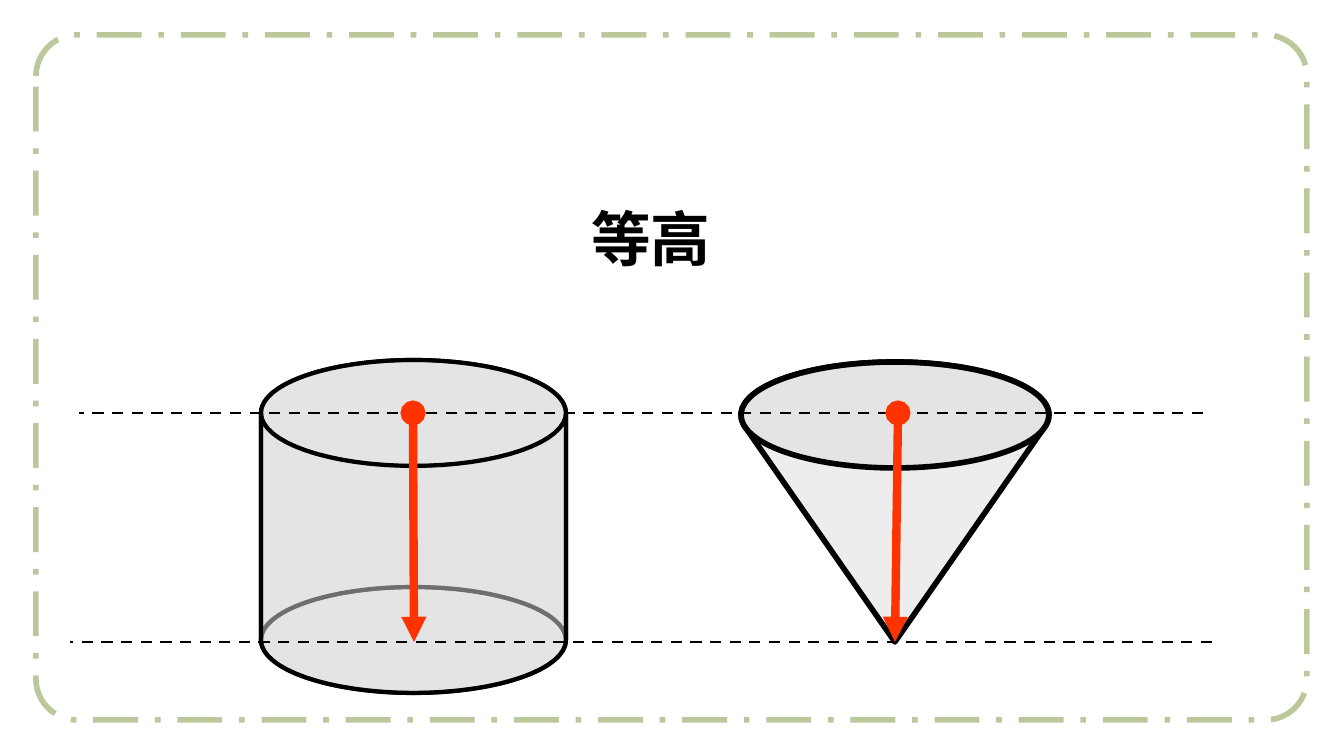
from dataclasses import dataclass
from math import cos, radians, sin

from lxml import etree
from pptx import Presentation
from pptx.dml.color import RGBColor
from pptx.enum.dml import MSO_LINE
from pptx.enum.shapes import MSO_CONNECTOR, MSO_SHAPE
from pptx.enum.text import MSO_ANCHOR, MSO_AUTO_SIZE, PP_ALIGN
from pptx.oxml.ns import qn
from pptx.util import Pt

EMU_PER_PX = 914400 / 134.4


@dataclass(frozen=True)
class Theme:
    white: str = "FFFFFF"
    ink: str = "000000"
    frame: str = "BAC89B"
    solid: str = "DDDDDD"
    height: str = "FF3300"
    font: str = "Noto Sans CJK SC"
    title_size: int = 32


THEME = Theme()


def px(n):
    return round(n * EMU_PER_PX)


def format_line(line, color, width, dash=None):
    line.color.rgb = RGBColor.from_string(color)
    line.width = Pt(width)
    if dash is not None:
        line.dash_style = dash


def format_shape(sp, fill, color, width, dash=None, alpha=None):
    sp.shadow.inherit = False
    sp.fill.solid()
    sp.fill.fore_color.rgb = RGBColor.from_string(fill)
    if alpha is not None:
        clr = sp._element.spPr.find(qn("a:solidFill"))[0]
        etree.SubElement(clr, qn("a:alpha")).set("val", str(alpha * 1000))
    format_line(sp.line, color, width, dash)


def arc(oval, start, end, steps=32):
    """Points on an ellipse (left, top, width, height); angles run clockwise."""
    x, y, w, h = oval
    angles = [radians(start + (end - start) * i / steps) for i in range(steps + 1)]
    return [(x + w / 2 * (1 + cos(a)), y + h / 2 * (1 + sin(a))) for a in angles]


def add_ellipse(shapes, oval, width):
    sp = shapes.add_shape(MSO_SHAPE.OVAL, *map(px, oval))
    format_shape(sp, THEME.solid, THEME.ink, width, alpha=50)


def add_outline(shapes, points, width):
    pts = [(px(x), px(y)) for x, y in points]
    builder = shapes.build_freeform(*pts[0], scale=1.0)
    builder.add_line_segments(pts[1:], close=True)
    format_shape(builder.convert_to_shape(), THEME.solid, THEME.ink, width, alpha=50)


def add_line(shapes, start, end, color, width, dash=None, head=None, tail=None):
    cn = shapes.add_connector(MSO_CONNECTOR.STRAIGHT, *map(px, start + end))
    format_line(cn.line, color, width, dash)
    spPr = cn._element.spPr
    for tag, kind in (("a:headEnd", head), ("a:tailEnd", tail)):
        if kind:
            etree.SubElement(spPr.find(qn("a:ln")), qn(tag)).set("type", kind)
    etree.SubElement(spPr, qn("a:effectLst"))


def set_text(sp, text, *, size, color, font, bold=False, align=PP_ALIGN.CENTER):
    tf = sp.text_frame
    tf.word_wrap = False
    tf.auto_size = MSO_AUTO_SIZE.SHAPE_TO_FIT_TEXT
    tf.vertical_anchor = MSO_ANCHOR.TOP
    p = tf.paragraphs[0]
    p.alignment = align
    r = p.add_run()
    r.text = text
    r.font.size = Pt(size)
    r.font.bold = bold
    r.font.name = font
    r.font.color.rgb = RGBColor.from_string(color)
    etree.SubElement(r._r.get_or_add_rPr(), qn("a:ea")).set("typeface", font)


def add_frame(shapes):
    sp = shapes.add_shape(MSO_SHAPE.ROUNDED_RECTANGLE, *map(px, (36, 35, 1271, 685)))
    sp.adjustments[0] = 0.06
    format_shape(sp, THEME.white, THEME.frame, 3, MSO_LINE.LONG_DASH_DOT)


def add_cylinder(shapes):
    group = shapes.add_group_shape().shapes
    top, base = (261, 360, 305, 106), (261, 587, 305, 106)
    for oval in (base, top):
        add_ellipse(group, oval, 2.25)
    # Back wall between the far arcs, then front wall between the near arcs
    for left, right in ((180, 360), (180, 0)):
        add_outline(group, arc(top, left, right) + arc(base, right, left), 2.25)


def add_cone(shapes):
    group = shapes.add_group_shape().shapes
    rim, apex = (741, 362, 308, 106), (895, 642)
    add_outline(group, arc(rim, 169, 371) + [apex], 3)
    add_ellipse(group, rim, 3)


def main():
    prs = Presentation()
    prs.slide_width, prs.slide_height = px(1344), px(756)
    slide = prs.slides.add_slide(prs.slide_layouts[5])
    shapes = slide.shapes

    add_frame(shapes)

    # Solids
    add_cylinder(shapes)
    add_cone(shapes)

    # Level lines
    for right, left, y in ((1203, 79, 413), (1212, 70, 642)):
        add_line(shapes, (right, y), (left, y), THEME.ink, 1.5, MSO_LINE.DASH)

    # Height arrows
    for x1, x2 in ((898, 895), (413, 414)):
        add_line(shapes, (x1, 413), (x2, 642), THEME.height, 4.5,
                 head="oval", tail="triangle")

    # Title, in front of the frame
    title = shapes.title
    title.left, title.top, title.width, title.height = map(px, (577, 195, 148, 86))
    set_text(title, "等高", size=THEME.title_size, color=THEME.ink,
             font=THEME.font, bold=True)
    shapes._spTree.append(title._element)

    prs.save("out.pptx")


if __name__ == "__main__":
    main()
